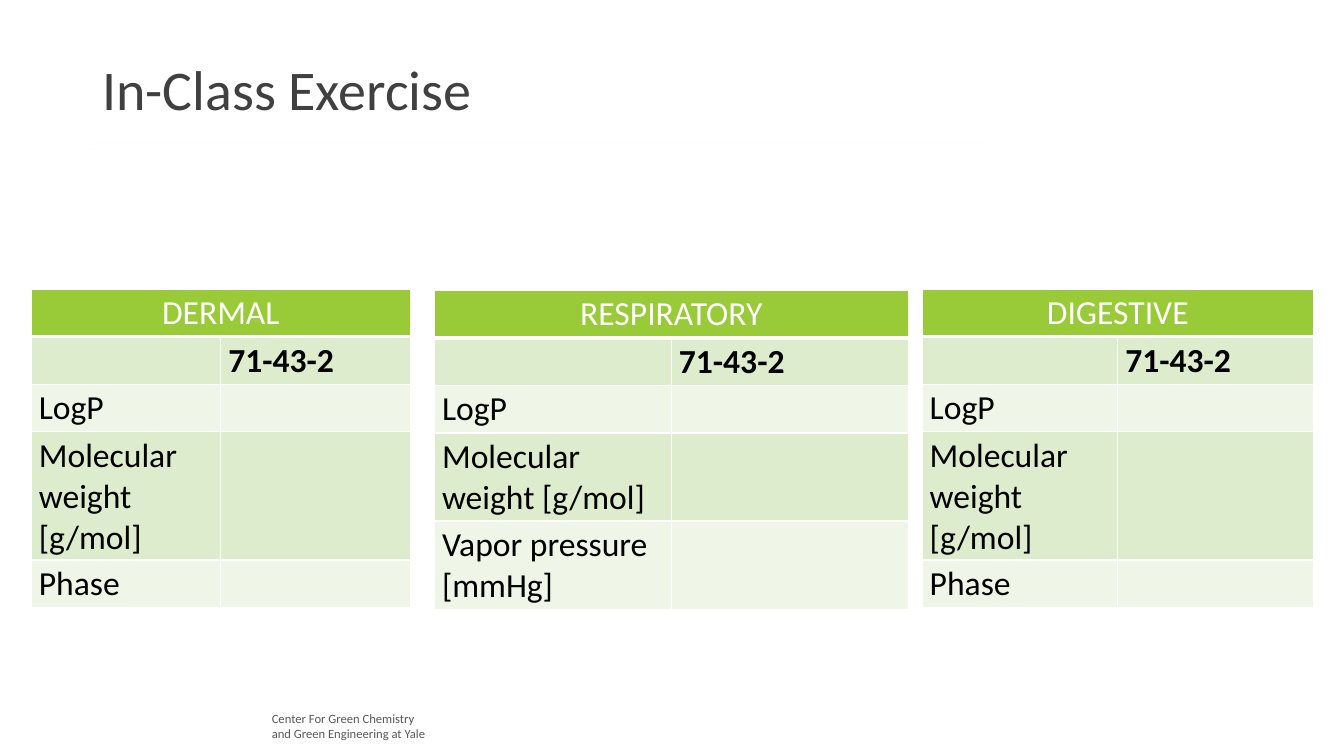
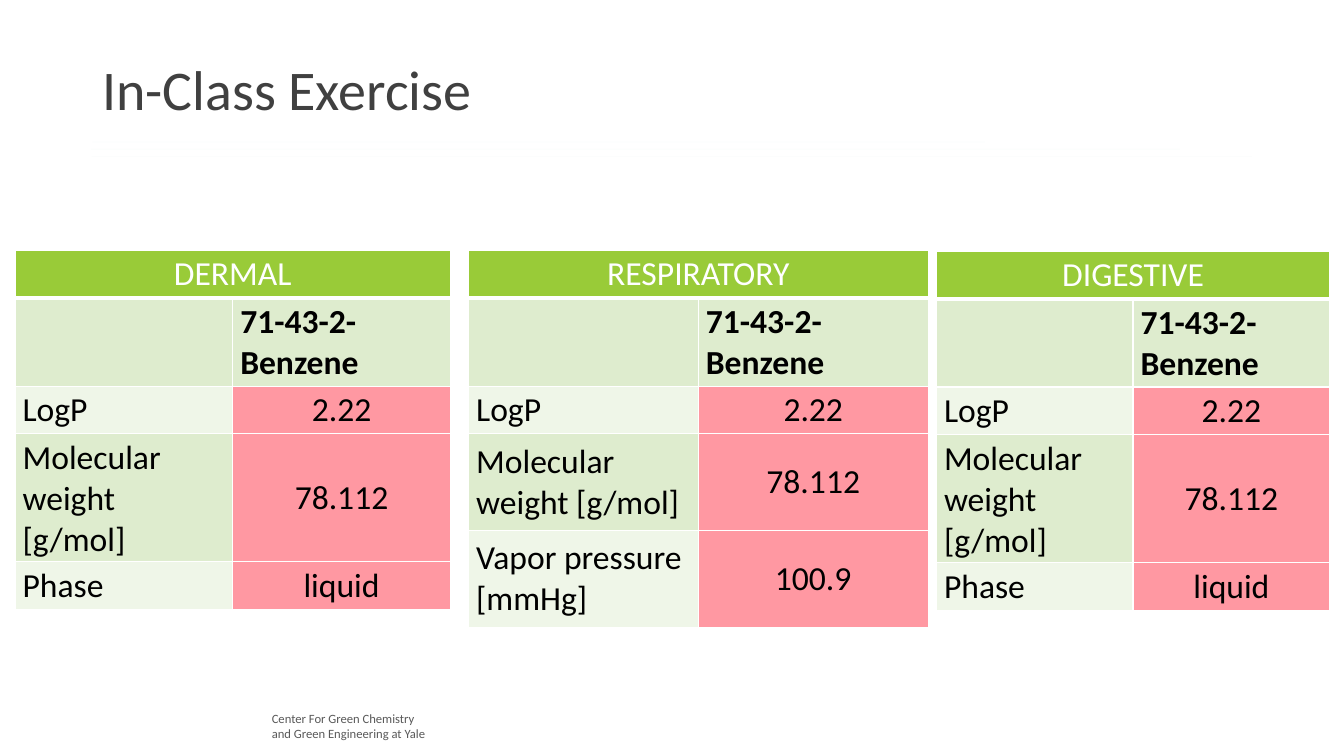
from dataclasses import dataclass

from lxml.etree import SubElement
from pptx import Presentation
from pptx.dml.color import RGBColor as RGB
from pptx.enum.shapes import MSO_CONNECTOR as Conn
from pptx.enum.text import MSO_ANCHOR as Anchor, PP_ALIGN as Align
from pptx.oxml.ns import qn
from pptx.util import Cm, Pt


@dataclass(frozen=True)
class Theme:
    font: str = "Calibri"
    title_size: int = 40
    table_size: int = 24
    footer_size: int = 9
    title: str = "404040"
    footer: str = "595959"
    text: str = "000000"
    white: str = "FFFFFF"
    header: str = "99CB38"
    bands: tuple = ("DEECCE", "EFF6E8")
    value: str = "FF98A2"
    rules: tuple = ("4EB3CF", "44C1A3", "37A76F")
    rule_alpha: int = 2000  # thousandths of a percent


# Row heights in cm, by number of text lines
ONE, TWO, THREE, TALL = 1.2, 2.22, 3.22, 2.44
RULES = ((2.33, 24.82, 3.58), (2.29, 29.74, 3.76), (2.31, 31.55, 3.94))
FOOTER = ("Center For Green Chemistry", "and Green Engineering at Yale")


class Deck:
    def __init__(self, theme):
        self.theme = theme
        self.prs = Presentation()
        self.prs.slide_width, self.prs.slide_height = Cm(33.87), Cm(19.05)
        self.slide = None

    def new_slide(self, title):
        """Start a slide with the shared footer, rules and title."""
        t = self.theme
        self.slide = self.prs.slides.add_slide(self.prs.slide_layouts[6])
        self.text(FOOTER, (6.6, 17.78, 4.72, 1.02), t.footer_size, t.footer)
        for (x1, x2, y), color in zip(RULES, t.rules):
            self.rule(x1, x2, y, color)
        tf = self.text([title], (2.33, 0.48, 29.21, 3.68), t.title_size, t.title)
        tf.vertical_anchor = Anchor.MIDDLE
        tf.paragraphs[0].line_spacing = 0.9

    def add_lines(self, tf, lines, size, color, bold=False, align=Align.LEFT):
        for i, line in enumerate(lines):
            p = tf.add_paragraph() if i else tf.paragraphs[0]
            p.alignment = align
            r = p.add_run()
            r.text = line
            r.font.name, r.font.size, r.font.bold = self.theme.font, Pt(size), bold
            r.font.color.rgb = RGB.from_string(color)

    def text(self, lines, box, size, color):
        tf = self.slide.shapes.add_textbox(*map(Cm, box)).text_frame
        tf.word_wrap = True
        self.add_lines(tf, lines, size, color)
        return tf

    def rule(self, x1, x2, y, color):
        """Draw a faint horizontal line under the title."""
        sp = self.slide.shapes.add_connector(Conn.STRAIGHT, Cm(x1), Cm(y), Cm(x2), Cm(y))
        sp.line.width = Pt(0.5)
        sp.line.color.rgb = RGB.from_string(color)
        spPr = sp._element.spPr
        clr = spPr.find(".//" + qn("a:srgbClr"))
        SubElement(clr, qn("a:alpha"), val=str(self.theme.rule_alpha))
        SubElement(spPr, qn("a:effectLst"))

    def cell(self, cell, text, fill, color, bold=False, align=Align.LEFT, bottom=1):
        tcPr = cell._tc.get_or_add_tcPr()
        for side, width in (("L", 1), ("R", 1), ("T", 1), ("B", bottom)):
            ln = SubElement(tcPr, qn("a:ln" + side), w=str(Pt(width)))
            solid = SubElement(ln, qn("a:solidFill"))
            SubElement(solid, qn("a:srgbClr"), val=self.theme.white)
        cell.fill.solid()
        cell.fill.fore_color.rgb = RGB.from_string(fill)
        cell.margin_left = cell.margin_right = Cm(0.19)
        cell.margin_top = cell.margin_bottom = Cm(0.09)
        cell.vertical_anchor = Anchor.MIDDLE
        if text:
            self.add_lines(cell.text_frame, text.split("\n"), self.theme.table_size,
                           color, bold, align)

    def table(self, heading, substance, box, rows):
        """Add a property table; rows hold label, value and height."""
        t = self.theme
        left, top, width = box
        rows = [(heading, "", ONE), ("", substance, TWO if "-B" in substance else ONE), *rows]
        height = sum(h for _, _, h in rows)
        tbl = self.slide.shapes.add_table(
            len(rows), 2, Cm(left), Cm(top), Cm(width), Cm(height)).table
        tbl.first_row = tbl.horz_banding = False
        for col in tbl.columns:
            col.width = Cm(width / 2)
        for i, (label, value, h) in enumerate(rows):
            tbl.rows[i].height = Cm(h)
            first, second = tbl.cell(i, 0), tbl.cell(i, 1)
            if i == 0:
                first.merge(second)
                self.cell(first, label, t.header, t.white, align=Align.CENTER, bottom=3)
                self.cell(second, "", t.header, t.white, bottom=3)
                continue
            band = t.bands[(i - 1) % 2]
            self.cell(first, label, band, t.text)
            if i == 1:
                self.cell(second, value, band, t.text, bold=True)
            else:
                self.cell(second, value, t.value if value else band, t.text,
                          align=Align.CENTER)


def exercise(deck, substance, boxes, log_p="", weight="", phase="", pressure="", tall=TWO):
    """Build one exercise slide; values left out stay blank."""
    deck.new_slide("In-Class Exercise")
    log_row = ("LogP", log_p, ONE)
    phase_row = ("Phase", phase, ONE)
    tables = (
        ("DERMAL", [log_row, ("Molecular weight [g/mol]", weight, THREE), phase_row]),
        ("RESPIRATORY", [log_row, ("Molecular weight [g/mol]", weight, tall),
                         ("Vapor pressure [mmHg]", pressure, tall)]),
        ("DIGESTIVE", [log_row, ("Molecular weight\n[g/mol]", weight, THREE), phase_row]),
    )
    for (heading, rows), box in zip(tables, boxes):
        deck.table(heading, substance, box, rows)


def main():
    deck = Deck(Theme())
    # Blank exercise: left, top, width of each table
    exercise(deck, "71-43-2",
             ((0.79, 7.28, 9.55), (10.95, 7.31, 11.94), (23.24, 7.28, 9.86)))
    # Completed exercise
    exercise(deck, "71-43-2-Benzene",
             ((0.38, 6.31, 10.97), (11.81, 6.31, 11.58), (23.6, 6.33, 9.91)),
             log_p="2.22", weight="78.112", phase="liquid", pressure="100.9", tall=TALL)
    deck.prs.save("out.pptx")


if __name__ == "__main__":
    main()
